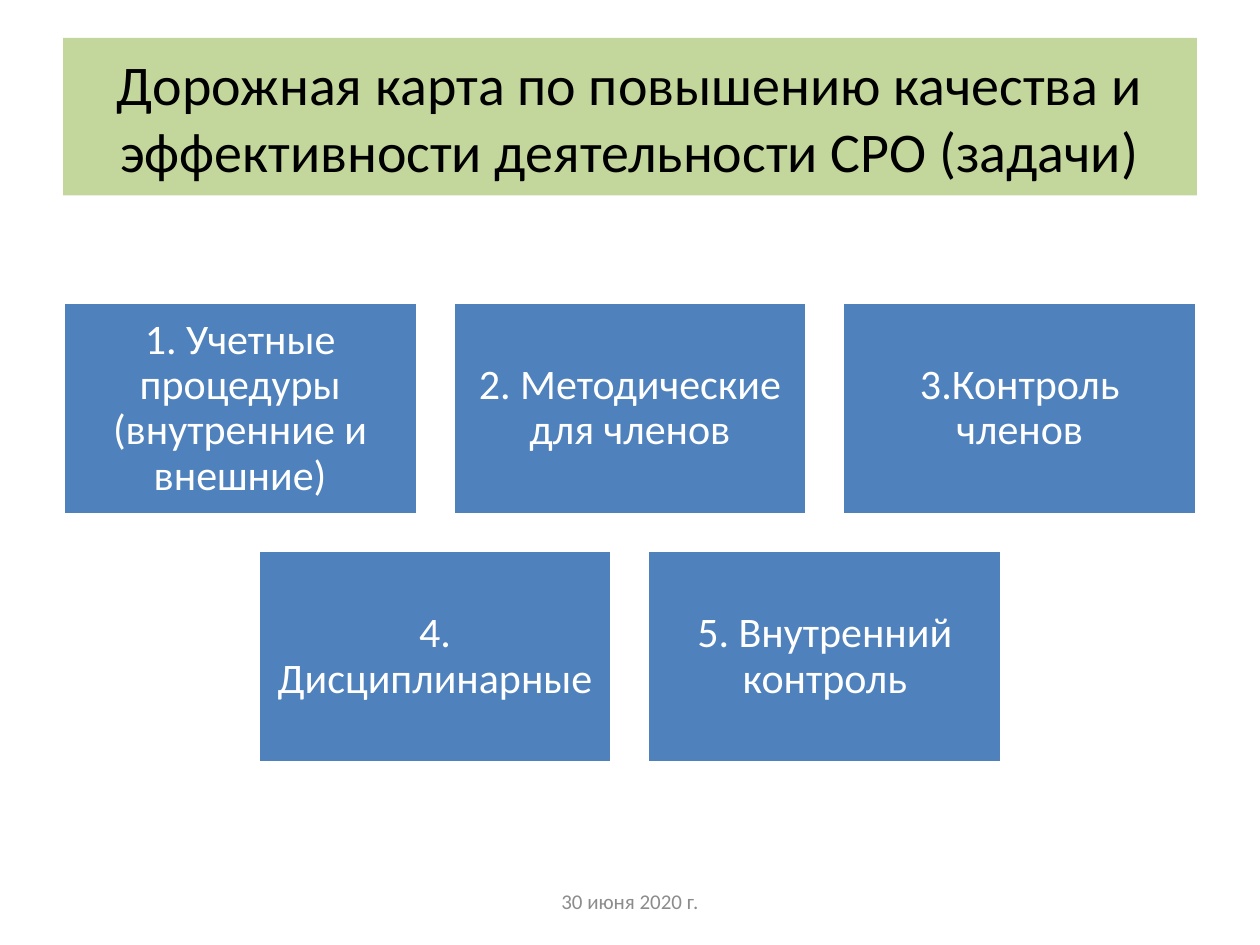
"""Build the roadmap slide: a title, five task boxes in two centred rows, and a date."""
from pptx import Presentation
from pptx.dml.color import RGBColor
from pptx.enum.shapes import MSO_SHAPE
from pptx.enum.text import MSO_ANCHOR, PP_ALIGN
from pptx.util import Pt

TITLE = "Дорожная карта по повышению качества и эффективности деятельности СРО (задачи)"
TASK_ROWS = [
    ["1. Учетные процедуры (внутренние и внешние)", "2. Методические для членов", "3.Контроль членов"],
    ["4. Дисциплинарные", "5. Внутренний контроль"],
]
DATE = "30 июня 2020 г."
COLORS = {"title": "C3D69B", "task": "4F81BD", "white": "FFFFFF", "black": "000000", "date": "8C8C8C"}
SLIDE_W, SLIDE_H = 720, 540
BOX_W, BOX_H, GAP, TOP = 202.5, 121.5, 20.25, 172.8


def rgb(name):
    return RGBColor.from_string(COLORS[name])


def write(shape, text, size, color):
    tf = shape.text_frame
    tf.text = text
    tf.word_wrap = True
    tf.vertical_anchor = MSO_ANCHOR.MIDDLE
    p = tf.paragraphs[0]
    p.alignment = PP_ALIGN.CENTER
    font = p.runs[0].font
    font.name, font.size = "Calibri", Pt(size)
    font.color.rgb = rgb(color)
    return tf


def add_title(s):
    title = s.shapes.title
    title.left, title.top, title.width, title.height = Pt(36), Pt(21.6), Pt(648), Pt(90)
    title.fill.solid()
    title.fill.fore_color.rgb = rgb("title")
    write(title, TITLE, 32, "black")


def add_task(s, text, left, top):
    box = s.shapes.add_shape(MSO_SHAPE.RECTANGLE, Pt(left), Pt(top), Pt(BOX_W), Pt(BOX_H))
    box.shadow.inherit = False
    box.fill.solid()
    box.fill.fore_color.rgb = rgb("task")
    box.line.color.rgb = rgb("white")
    box.line.width = Pt(2)
    tf = write(box, text, 24, "white")
    tf.margin_left = tf.margin_right = tf.margin_top = tf.margin_bottom = Pt(7.2)
    tf.paragraphs[0].line_spacing = 0.9


def main():
    prs = Presentation()
    prs.slide_width, prs.slide_height = Pt(SLIDE_W), Pt(SLIDE_H)
    s = prs.slides.add_slide(prs.slide_layouts[5])
    add_title(s)
    for i, row in enumerate(TASK_ROWS):
        row_w = len(row) * (BOX_W + GAP) - GAP
        for j, text in enumerate(row):
            left = (SLIDE_W - row_w) / 2 + j * (BOX_W + GAP)
            add_task(s, text, left, TOP + i * (BOX_H + GAP))
    date = s.shapes.add_textbox(Pt(246), Pt(500.5), Pt(228), Pt(28.75))
    write(date, DATE, 12, "date")
    prs.save("out.pptx")


if __name__ == "__main__":
    main()
